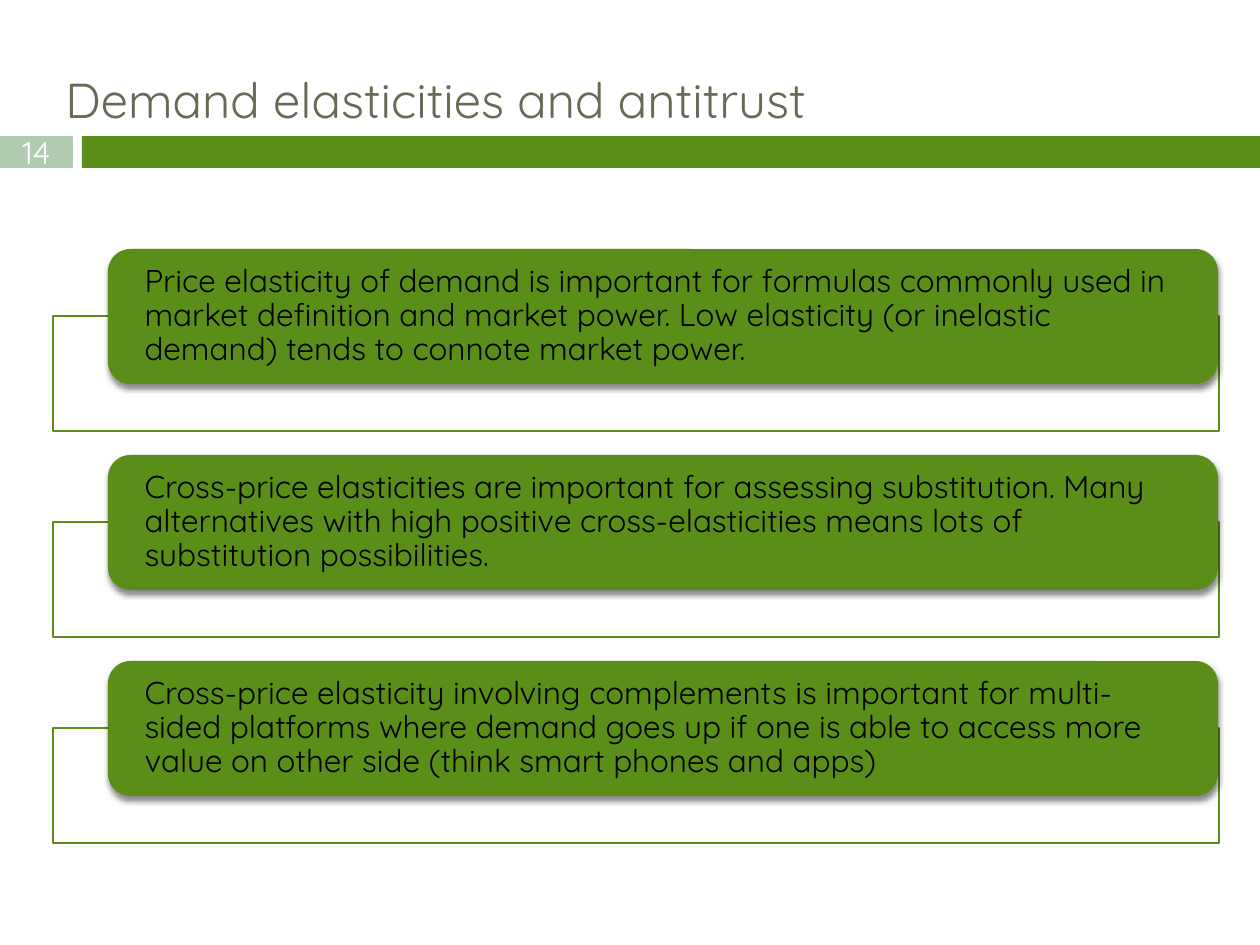
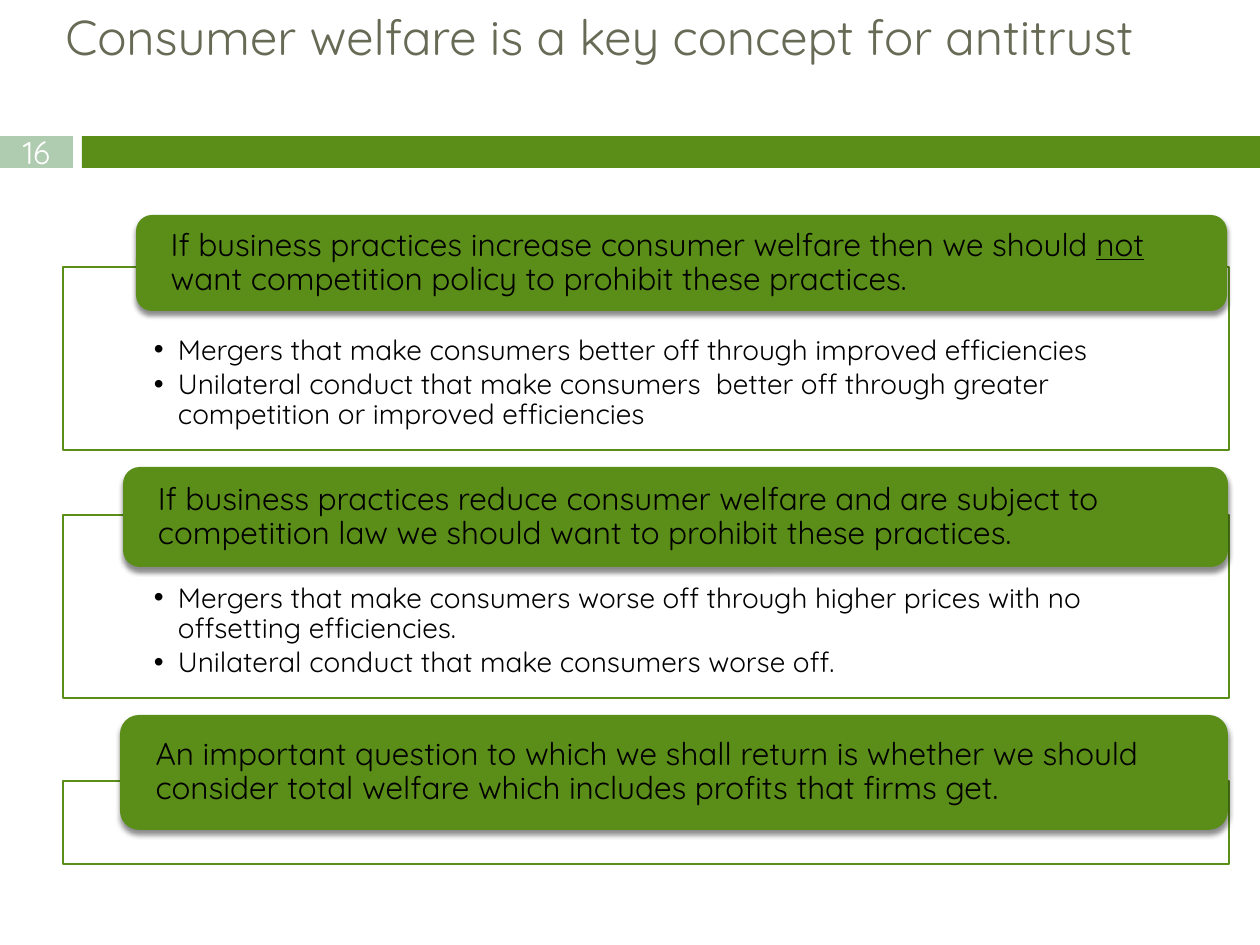
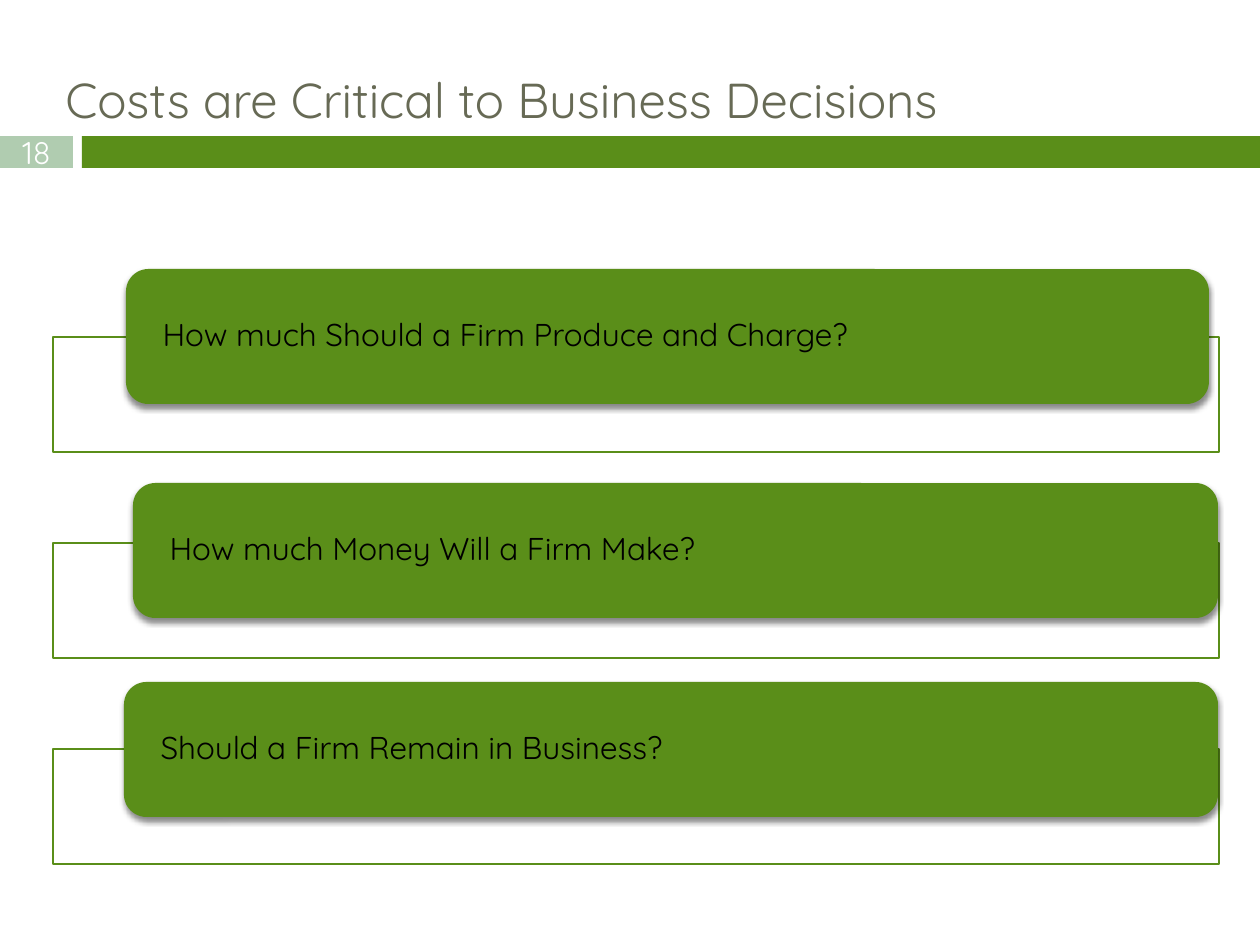
from dataclasses import dataclass

from lxml.etree import SubElement
from pptx import Presentation
from pptx.dml.color import RGBColor
from pptx.enum.shapes import MSO_SHAPE
from pptx.enum.text import MSO_ANCHOR, PP_ALIGN
from pptx.oxml.ns import qn
from pptx.util import Emu, Pt


@dataclass(frozen=True)
class Theme:
    font: str = "Quicksand"
    green: str = "5A8E19"
    sage: str = "B0CCB0"
    white: str = "FFFFFF"
    black: str = "000000"
    title_color: str = "676A55"
    title_size: int = 28
    card_size: int = 18
    bullet_size: int = 16
    number_size: int = 18
    frame_line: float = 0.79
    line_spacing: float = 0.9


THEME = Theme()
PX_PER_INCH = 126
SLIDE_W, SLIDE_H = 1260, 945
BAND_TOP, BAND_H = 136, 32
NUMBER_W, BAND_LEFT = 73, 82
TITLE_LEFT, TITLE_W, TITLE_H = 53, 1124, 71
FRAME_W, FRAME_H, FRAME_PITCH = 1166, 115, 206
CARD_H = 135
CARD_MARGINS = (30, 0, 30, 0)
FRAME_MARGINS = (91, 69, 91, 15)
BULLET_INDENT = 24


def even_frames(top):
    """Three equally spaced frames as (top, height)."""
    return [(top + i * FRAME_PITCH, FRAME_H) for i in range(3)]


# A card is (left, top, width, height), text, bullets; _word_ is underlined.
SLIDES = [
    {
        "number": 14, "title": "Demand elasticities and antitrust", "title_top": 63,
        "frame_left": 53, "frames": even_frames(316),
        "cards": [
            ((108, 249, 1110, CARD_H),
             "Price elasticity of demand is important for formulas commonly used in "
             "market definition and market power. Low elasticity (or inelastic "
             "demand) tends to connote market power.", []),
            ((108, 455, 1110, CARD_H),
             "Cross-price elasticities are important for assessing substitution. Many "
             "alternatives with high positive cross-elasticities means lots of "
             "substitution possibilities.", []),
            ((108, 661, 1110, CARD_H),
             "Cross-price elasticity involving complements is important for "
             "multi-sided platforms where demand goes up if one is able to access more "
             "value on other side (think smart phones and apps)", []),
        ],
    },
    {
        "number": 16, "title": "Consumer welfare is a key concept for antitrust",
        "title_top": 0,
        "frame_left": 63, "frames": [(267, 183), (515, 183), (781, 83)],
        "cards": [
            ((136, 215, 1091, 96),
             "If business practices increase consumer welfare then we should _not_ "
             "want competition policy to prohibit these practices.",
             ["Mergers that make consumers better off through improved efficiencies",
              "Unilateral conduct that make consumers  better off through greater "
              "competition or improved efficiencies"]),
            ((123, 467, 1105, 100),
             "If business practices reduce consumer welfare and are subject to "
             "competition law we should want to prohibit these practices.",
             ["Mergers that make consumers worse off through higher prices with no "
              "offsetting efficiencies.",
              "Unilateral conduct that make consumers worse off."]),
            ((120, 715, 1108, 115),
             "An important question to which we shall return is whether we should "
             "consider total welfare which includes profits that firms get.", []),
        ],
    },
    {
        "number": 18, "title": "Costs are Critical to Business Decisions", "title_top": 63,
        "frame_left": 53, "frames": even_frames(337),
        "cards": [
            ((126, 269, 1083, CARD_H), "How much Should a Firm Produce and Charge?", []),
            ((133, 483, 1085, CARD_H), "How much Money Will a Firm Make?", []),
            ((124, 682, 1094, CARD_H), "Should a Firm Remain in Business?", []),
        ],
    },
]


def px(n):
    return Emu(round(n * 914400 / PX_PER_INCH))


def rgb(color):
    return RGBColor.from_string(color)


def add_bullet(p):
    pPr = p._p.get_or_add_pPr()
    pPr.set("marL", str(px(BULLET_INDENT)))
    pPr.set("indent", str(-px(BULLET_INDENT)))
    SubElement(pPr, qn("a:buFont"), typeface="Arial")
    SubElement(pPr, qn("a:buChar"), char="•")


def write(sp, paragraphs, size, color, margins=None, anchor=MSO_ANCHOR.TOP,
          align=PP_ALIGN.LEFT, spacing=None, after=0, bullets=False):
    tf = sp.text_frame
    tf.word_wrap = True
    tf.vertical_anchor = anchor
    if margins:
        (tf.margin_left, tf.margin_top,
         tf.margin_right, tf.margin_bottom) = map(px, margins)
    for i, text in enumerate(paragraphs):
        p = tf.add_paragraph() if i else tf.paragraphs[0]
        p.alignment = align
        if spacing:
            p.line_spacing = spacing
        p.space_after = Pt(after)
        if bullets:
            add_bullet(p)
        for j, part in enumerate(text.split("_")):
            r = p.add_run()
            r.text = part
            r.font.name = THEME.font
            r.font.size = Pt(size)
            r.font.color.rgb = rgb(color)
            if j % 2:
                r.font.underline = True


def add_box(slide, box, fill, kind=MSO_SHAPE.RECTANGLE, line=None):
    sp = slide.shapes.add_shape(kind, *map(px, box))
    sp.shadow.inherit = False
    sp.fill.solid()
    sp.fill.fore_color.rgb = rgb(fill)
    if line:
        sp.line.color.rgb = rgb(line)
        sp.line.width = Pt(THEME.frame_line)
    else:
        sp.line.fill.background()
    return sp


def set_alpha(color_parent, percent):
    SubElement(color_parent.find(qn("a:srgbClr")), qn("a:alpha"), val=str(percent * 1000))


def add_shadow(sp):
    effects = sp._element.spPr.find(qn("a:effectLst"))
    shadow = SubElement(effects, qn("a:outerShdw"), blurRad=str(Pt(3)),
                        dist=str(Pt(2.4)), dir="5400000", rotWithShape="0")
    SubElement(shadow, qn("a:srgbClr"), val=THEME.black)
    set_alpha(shadow, 45)


def add_header(slide, title, top, number):
    add_box(slide, (BAND_LEFT, BAND_TOP, SLIDE_W - BAND_LEFT, BAND_H), THEME.green)
    sp = add_box(slide, (0, BAND_TOP, NUMBER_W, BAND_H), THEME.sage)
    write(sp, [str(number)], THEME.number_size, THEME.white, margins=(0, 0, 0, 0),
          anchor=MSO_ANCHOR.MIDDLE, align=PP_ALIGN.CENTER)
    sp = slide.shapes.add_textbox(*map(px, (TITLE_LEFT, top, TITLE_W, TITLE_H)))
    write(sp, [title], THEME.title_size, THEME.title_color)


def add_frame(slide, box, bullets):
    sp = add_box(slide, box, THEME.white, line=THEME.green)
    set_alpha(sp._element.spPr.find(qn("a:solidFill")), 90)
    if bullets:
        write(sp, bullets, THEME.bullet_size, THEME.black, margins=FRAME_MARGINS,
              spacing=THEME.line_spacing, after=2.4, bullets=True)


def add_card(slide, box, text):
    sp = add_box(slide, box, THEME.green, kind=MSO_SHAPE.ROUNDED_RECTANGLE)
    add_shadow(sp)
    write(sp, [text], THEME.card_size, THEME.black, margins=CARD_MARGINS,
          anchor=MSO_ANCHOR.MIDDLE, spacing=THEME.line_spacing)


def main():
    prs = Presentation()
    prs.slide_width, prs.slide_height = px(SLIDE_W), px(SLIDE_H)
    for content in SLIDES:
        slide = prs.slides.add_slide(prs.slide_layouts[6])
        add_header(slide, content["title"], content["title_top"], content["number"])
        for (top, height), (box, text, bullets) in zip(content["frames"], content["cards"]):
            add_frame(slide, (content["frame_left"], top, FRAME_W, height), bullets)
            add_card(slide, box, text)
    prs.save("out.pptx")


if __name__ == "__main__":
    main()
